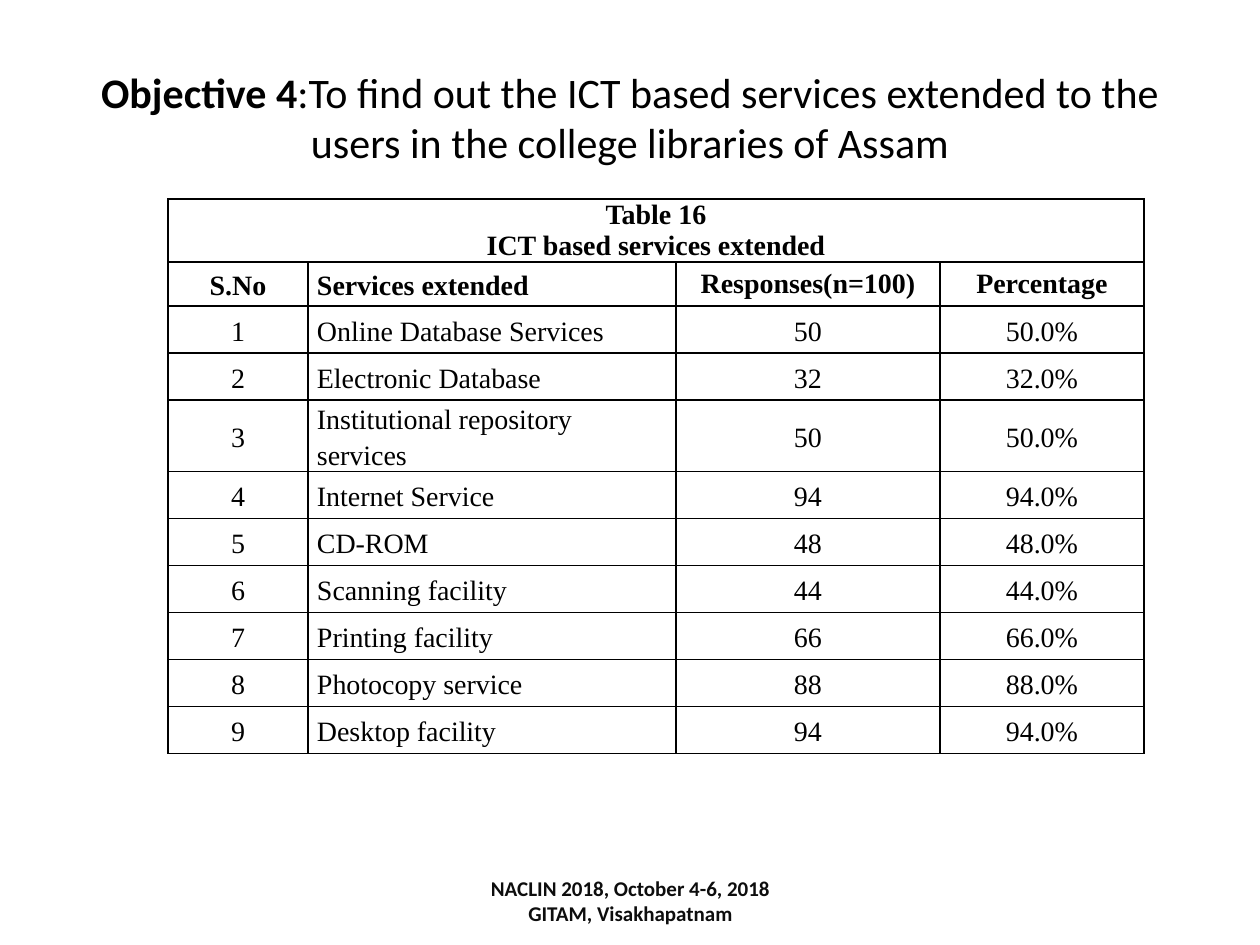
from dataclasses import dataclass

from lxml.etree import SubElement
from pptx import Presentation
from pptx.dml.color import RGBColor
from pptx.enum.text import MSO_ANCHOR, PP_ALIGN
from pptx.oxml.ns import qn
from pptx.util import Emu, Pt


@dataclass(frozen=True)
class Theme:
    heading_font: str = "Calibri"
    table_font: str = "Times New Roman"
    ink: str = "000000"
    footer_ink: str = "0D0D0D"
    title_size: int = 24
    table_size: int = 16
    footer_size: int = 12
    border_width: int = 1
    line_spacing: float = 1.15


THEME = Theme()
EMU_PER_PX = 914400 / 126

CAPTION = ["Table 16", "ICT based services extended"]
HEADINGS = ["S.No", "Services extended", "Responses(n=100)", "Percentage"]
SERVICES = [
    ("Online Database Services", 50),
    ("Electronic Database", 32),
    ("Institutional repository services", 50),
    ("Internet Service", 94),
    ("CD-ROM", 48),
    ("Scanning facility", 44),
    ("Printing facility", 66),
    ("Photocopy service", 88),
    ("Desktop facility", 94),
]
COLUMN_WIDTHS = [140, 368, 264, 204]
CAPTION_HEIGHT, HEADING_HEIGHT, SERVICE_HEIGHT, WRAPPED_HEIGHT = 63, 44, 47, 71
WRAPPED_SERVICE = "Institutional repository services"


def px(length):
    return Emu(round(length * EMU_PER_PX))


def style_font(font, name, size, colour, bold):
    font.name = name
    font.size = Pt(size)
    font.color.rgb = RGBColor.from_string(colour)
    font.bold = bold


def add_title(slide, left, top, width, height):
    title = slide.shapes.title
    title.left, title.top, title.width, title.height = map(px, (left, top, width, height))
    frame = title.text_frame
    frame.word_wrap = True
    frame.vertical_anchor = MSO_ANCHOR.MIDDLE
    paragraph = frame.paragraphs[0]
    paragraph.alignment = PP_ALIGN.CENTER
    style_font(paragraph.font, THEME.heading_font, THEME.title_size, THEME.ink, False)
    objective = paragraph.add_run()
    objective.text = "Objective 4"
    objective.font.bold = True
    paragraph.add_run().text = (
        ":To find out the ICT based services extended to the users"
        " in the college libraries of Assam"
    )


def add_borders(cell):
    properties = cell._tc.get_or_add_tcPr()
    for position, side in enumerate(("lnL", "lnR", "lnT", "lnB")):
        line = properties.makeelement(qn(f"a:{side}"), w=str(Pt(THEME.border_width)))
        fill = SubElement(line, qn("a:solidFill"))
        SubElement(fill, qn("a:srgbClr"), val=THEME.ink)
        properties.insert(position, line)


def format_cell(cell):
    cell.fill.background()
    cell.margin_left = cell.margin_right = px(9)
    cell.margin_top = cell.margin_bottom = 0
    add_borders(cell)


def fill_cell(cell, text, bold=False, alignment=PP_ALIGN.CENTER,
              anchor=MSO_ANCHOR.MIDDLE, spacing=THEME.line_spacing):
    cell.text = text
    cell.vertical_anchor = anchor
    for paragraph in cell.text_frame.paragraphs:
        paragraph.alignment = alignment
        paragraph.line_spacing = spacing
        style_font(paragraph.font, THEME.table_font, THEME.table_size, THEME.ink, bold)


def add_services_table(slide, left, top, width):
    heights = [CAPTION_HEIGHT, HEADING_HEIGHT] + [
        WRAPPED_HEIGHT if service == WRAPPED_SERVICE else SERVICE_HEIGHT
        for service, _ in SERVICES
    ]
    table = slide.shapes.add_table(
        len(heights), len(HEADINGS), px(left), px(top), px(width), px(sum(heights))
    ).table
    table.first_row = table.horz_banding = False
    for column, column_width in zip(table.columns, COLUMN_WIDTHS):
        column.width = px(column_width)
    for row, height in zip(table.rows, heights):
        row.height = px(height)
    for cell in table.iter_cells():
        format_cell(cell)

    caption = table.cell(0, 0)
    caption.merge(table.cell(0, len(HEADINGS) - 1))
    fill_cell(caption, "\n".join(CAPTION), bold=True, anchor=MSO_ANCHOR.TOP, spacing=1.0)

    alignments = [PP_ALIGN.CENTER, PP_ALIGN.LEFT, PP_ALIGN.CENTER, PP_ALIGN.CENTER]
    heading_spacings = [THEME.line_spacing] * 2 + [1.0] * 2
    for column, heading in enumerate(HEADINGS):
        fill_cell(table.cell(1, column), heading, bold=True,
                  alignment=alignments[column], spacing=heading_spacings[column])
    for number, (service, responses) in enumerate(SERVICES, start=1):
        values = [str(number), service, str(responses), f"{responses:.1f}%"]
        for column, value in enumerate(values):
            fill_cell(table.cell(number + 1, column), value, alignment=alignments[column])


def add_footer(slide, left, top, width, height):
    footer = slide.shapes.add_textbox(*map(px, (left, top, width, height)))
    frame = footer.text_frame
    frame.word_wrap = True
    frame.vertical_anchor = MSO_ANCHOR.MIDDLE
    frame.text = "NACLIN 2018, October 4-6, 2018\nGITAM, Visakhapatnam"
    for paragraph in frame.paragraphs:
        paragraph.alignment = PP_ALIGN.CENTER
        style_font(paragraph.font, THEME.heading_font, THEME.footer_size, THEME.footer_ink, True)


def main():
    presentation = Presentation()
    presentation.slide_width, presentation.slide_height = px(1260), px(945)
    slide = presentation.slides.add_slide(presentation.slide_layouts[5])
    add_title(slide, 63, 38, 1134, 158)
    add_services_table(slide, 168, 199, sum(COLUMN_WIDTHS))
    add_footer(slide, 431, 876, 399, 50)
    presentation.save("out.pptx")


if __name__ == "__main__":
    main()
